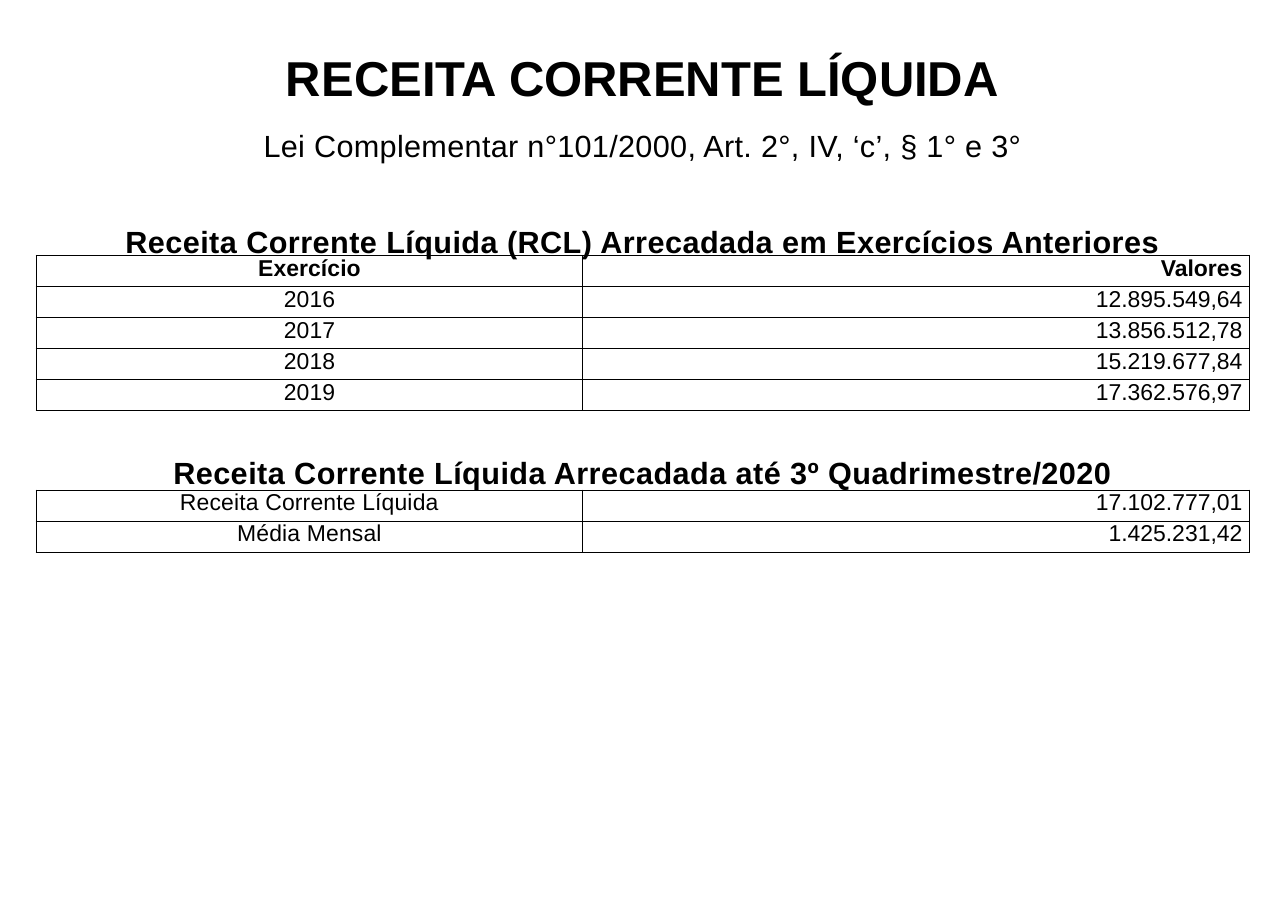
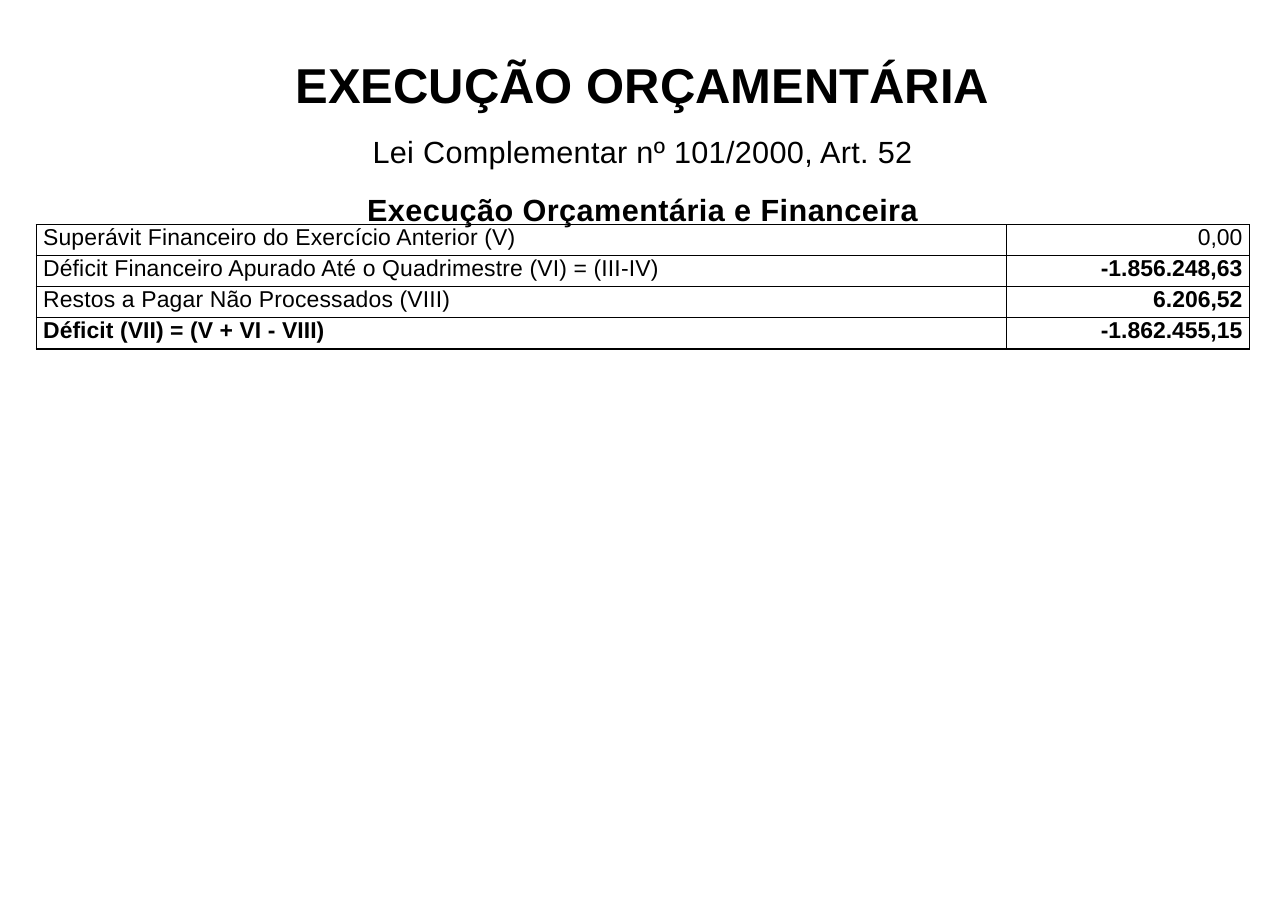
import dataclasses

import lxml.etree
import pptx
import pptx.dml.color
import pptx.enum.text
import pptx.oxml.ns
import pptx.util

COLOURS = {"ink": "000000", "paper": "FFFFFF"}
FONT = "Arial"
SLIDE_WIDTH = pptx.util.Inches(11.69)
SLIDE_HEIGHT = pptx.util.Inches(8.27)
BORDER = pptx.util.Pt(0.85)
ALIGN = pptx.enum.text.PP_ALIGN


def across(percent: float) -> int:
    return round(SLIDE_WIDTH * percent / 100)


def down(percent: float) -> int:
    return round(SLIDE_HEIGHT * percent / 100)


BAND_LEFT = across(2.82)
BAND_WIDTH = across(94.18)
TITLE_HEIGHT = down(6.4)
LINE_HEIGHT = down(3.86)
ROW_HEIGHT = down(3.41)
CELL_MARGIN = across(0.53)


@dataclasses.dataclass(frozen=True)
class Style:
    size: float
    bold: bool = False
    tracking: float = 0


TITLE = Style(32, bold=True)
LAW = Style(20, tracking=0.2)
HEADING = Style(20, bold=True, tracking=0.27)
LABEL = Style(15, tracking=0.1)
LABEL_BOLD = Style(15, bold=True, tracking=0.05)
VALUE = Style(15)
VALUE_BOLD = Style(15, bold=True)


@dataclasses.dataclass(frozen=True)
class Entry:
    label: str
    value: str
    label_style: Style = LABEL
    value_style: Style = VALUE


@dataclasses.dataclass(frozen=True)
class Statement:
    heading: str
    heading_top: float
    top: float
    label_share: float
    label_align: ALIGN
    entries: tuple[Entry, ...]


@dataclasses.dataclass(frozen=True)
class Report:
    title: str
    title_top: float
    law: str
    law_top: float
    statements: tuple[Statement, ...]


REPORTS = (
    Report(
        "RECEITA CORRENTE LÍQUIDA", 5.32,
        "Lei Complementar n°101/2000, Art. 2°, IV, ‘c’, § 1° e 3°", 13.97,
        (
            Statement(
                "Receita Corrente Líquida (RCL) Arrecadada em Exercícios Anteriores",
                24.43, 28.05, 45.05, ALIGN.CENTER,
                (
                    Entry("Exercício", "Valores", LABEL_BOLD, VALUE_BOLD),
                    Entry("2016", "12.895.549,64"),
                    Entry("2017", "13.856.512,78"),
                    Entry("2018", "15.219.677,84"),
                    Entry("2019", "17.362.576,97"),
                ),
            ),
            Statement(
                "Receita Corrente Líquida Arrecadada até 3º Quadrimestre/2020",
                49.82, 53.81, 45.05, ALIGN.CENTER,
                (
                    Entry("Receita Corrente Líquida", "17.102.777,01"),
                    Entry("Média Mensal", "1.425.231,42"),
                ),
            ),
        ),
    ),
    Report(
        "EXECUÇÃO ORÇAMENTÁRIA", 6.05,
        "Lei Complementar nº 101/2000, Art. 52", 14.57,
        (
            Statement(
                "Execução Orçamentária e Financeira",
                20.92, 24.67, 80, ALIGN.LEFT,
                (
                    Entry("Superávit Financeiro do Exercício Anterior (V)", "0,00"),
                    Entry("Déficit Financeiro Apurado Até o Quadrimestre (VI) = (III-IV)",
                          "-1.856.248,63", value_style=VALUE_BOLD),
                    Entry("Restos a Pagar Não Processados (VIII)", "6.206,52",
                          value_style=VALUE_BOLD),
                    Entry("Déficit (VII) = (V + VI - VIII)", "-1.862.455,15",
                          LABEL_BOLD, VALUE_BOLD),
                ),
            ),
        ),
    ),
)


def write(frame, text: str, style: Style, align: ALIGN) -> None:
    frame.text = text
    paragraph = frame.paragraphs[0]
    paragraph.alignment = align
    for run in paragraph.runs:
        run.font.name = FONT
        run.font.size = pptx.util.Pt(style.size)
        run.font.bold = style.bold
        run.font.color.rgb = pptx.dml.color.RGBColor.from_string(COLOURS["ink"])
        run.font._element.set("spc", str(round(style.tracking * 100)))


def write_line(holder, text: str, style: Style) -> None:
    frame = holder.text_frame
    frame.word_wrap = True
    frame.auto_size = pptx.enum.text.MSO_AUTO_SIZE.NONE
    frame.vertical_anchor = pptx.enum.text.MSO_ANCHOR.TOP
    frame.margin_left = frame.margin_right = 0
    frame.margin_top = frame.margin_bottom = 0
    write(frame, text, style, ALIGN.CENTER)


def add_title(slide, report: Report) -> None:
    title = slide.shapes.title
    title.left, title.top = BAND_LEFT, down(report.title_top)
    title.width, title.height = BAND_WIDTH, TITLE_HEIGHT
    write_line(title, report.title, TITLE)
    title.text_frame.paragraphs[0].line_spacing = pptx.util.Pt(38.1)


def add_line(slide, text: str, top: float, style: Style) -> None:
    line = slide.shapes.add_textbox(BAND_LEFT, down(top), BAND_WIDTH, LINE_HEIGHT)
    write_line(line, text, style)


def add_borders(cell) -> None:
    properties = cell._tc.get_or_add_tcPr()
    qn = pptx.oxml.ns.qn
    for position, side in enumerate(("lnL", "lnR", "lnT", "lnB")):
        border = lxml.etree.Element(qn(f"a:{side}"), w=str(BORDER))
        fill = lxml.etree.SubElement(border, qn("a:solidFill"))
        lxml.etree.SubElement(fill, qn("a:srgbClr"), val=COLOURS["ink"])
        properties.insert(position, border)


def fill_cell(cell, text: str, style: Style, align: ALIGN) -> None:
    cell.margin_left = cell.margin_right = CELL_MARGIN
    cell.margin_top = cell.margin_bottom = 0
    cell.vertical_anchor = pptx.enum.text.MSO_ANCHOR.TOP
    cell.fill.background()
    add_borders(cell)
    write(cell.text_frame, text, style, align)


def add_statement(slide, statement: Statement) -> None:
    add_line(slide, statement.heading, statement.heading_top, HEADING)
    count = len(statement.entries)
    table = slide.shapes.add_table(
        count, 2, BAND_LEFT, down(statement.top), BAND_WIDTH, ROW_HEIGHT * count
    ).table
    table.first_row = table.horz_banding = False
    label_width = round(BAND_WIDTH * statement.label_share / 100)
    table.columns[0].width = label_width
    table.columns[1].width = BAND_WIDTH - label_width
    for index, entry in enumerate(statement.entries):
        table.rows[index].height = ROW_HEIGHT
        fill_cell(table.cell(index, 0), entry.label, entry.label_style,
                  statement.label_align)
        fill_cell(table.cell(index, 1), entry.value, entry.value_style, ALIGN.RIGHT)


def add_report(deck, report: Report) -> None:
    slide = deck.slides.add_slide(deck.slide_layouts[5])
    add_title(slide, report)
    add_line(slide, report.law, report.law_top, LAW)
    for statement in report.statements:
        add_statement(slide, statement)


def main() -> None:
    deck = pptx.Presentation()
    deck.slide_width, deck.slide_height = SLIDE_WIDTH, SLIDE_HEIGHT
    backdrop = deck.slide_master.background.fill
    backdrop.solid()
    backdrop.fore_color.rgb = pptx.dml.color.RGBColor.from_string(COLOURS["paper"])
    for report in REPORTS:
        add_report(deck, report)
    deck.save("out.pptx")


if __name__ == "__main__":
    main()
